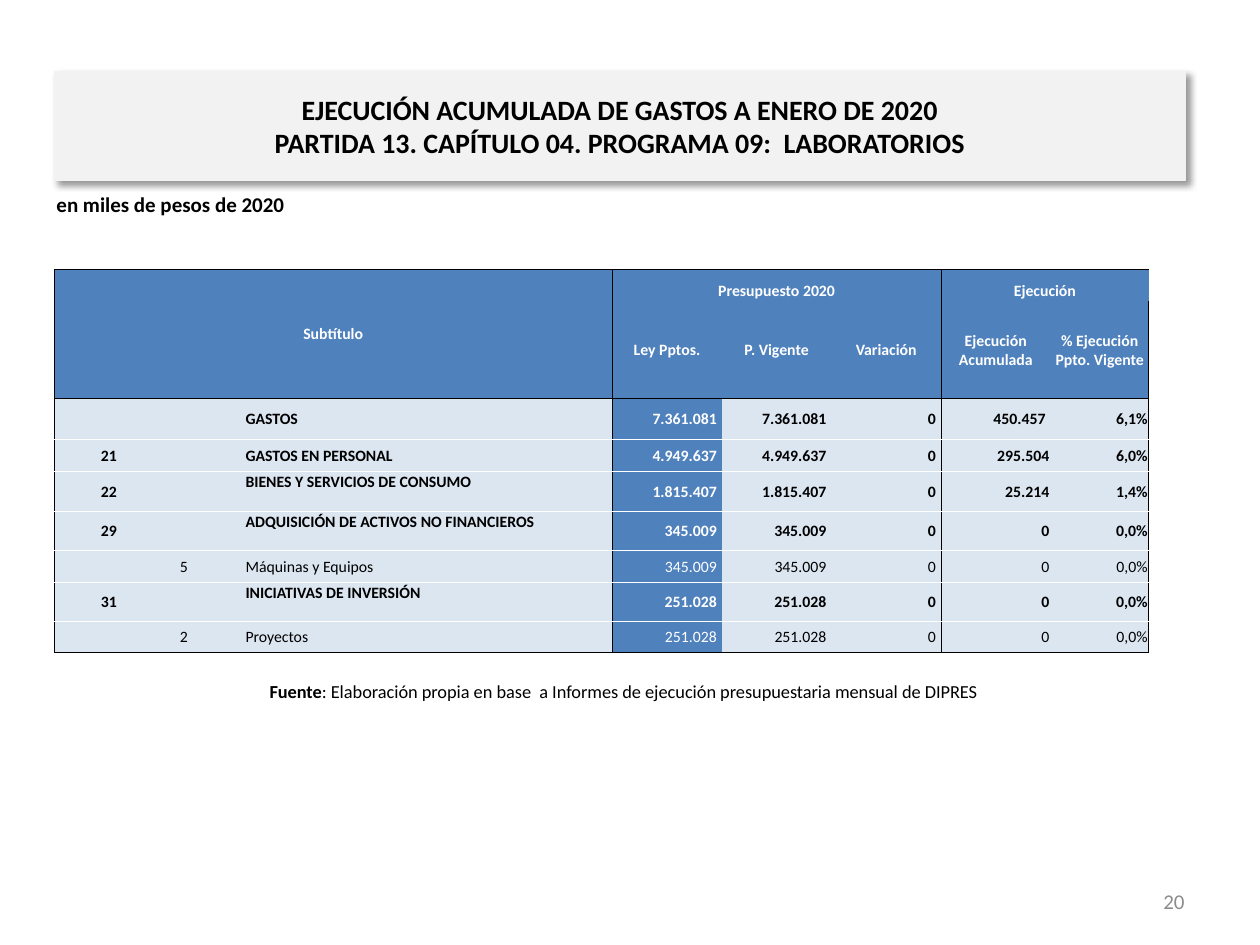
from lxml import etree
from pptx import Presentation
from pptx.dml.color import RGBColor
from pptx.enum import text as t
from pptx.oxml.ns import qn
from pptx.util import Inches, Pt

# Content
TITLE = ["EJECUCIÓN ACUMULADA DE GASTOS A ENERO DE 2020",
         "PARTIDA 13. CAPÍTULO 04. PROGRAMA 09:  LABORATORIOS"]
UNITS = "en miles de pesos de 2020"
SOURCE = ("Fuente", ": Elaboración propia en base  a Informes de ejecución "
          "presupuestaria mensual de DIPRES")
PAGE = "20"
GROUPS = [  # row, column, last row, last column, label
    (0, 0, 1, 3, "Subtítulo"),
    (0, 4, 0, 6, "Presupuesto 2020"),
    (0, 7, 0, 8, "Ejecución"),
]
HEADS = ["Ley Pptos.", "P. Vigente", "Variación",
         "Ejecución Acumulada", "% Ejecución Ppto. Vigente"]
ROWS = [  # code, item, name, law, current, change, spent, share
    ("", "", "GASTOS", "7.361.081", "7.361.081", "0", "450.457", "6,1%"),
    ("21", "", "GASTOS EN PERSONAL", "4.949.637", "4.949.637", "0", "295.504", "6,0%"),
    ("22", "", "BIENES Y SERVICIOS DE CONSUMO", "1.815.407", "1.815.407", "0", "25.214", "1,4%"),
    ("29", "", "ADQUISICIÓN DE ACTIVOS NO FINANCIEROS", "345.009", "345.009", "0", "0", "0,0%"),
    ("", "5", "Máquinas y Equipos", "345.009", "345.009", "0", "0", "0,0%"),
    ("31", "", "INICIATIVAS DE INVERSIÓN", "251.028", "251.028", "0", "0", "0,0%"),
    ("", "2", "Proyectos", "251.028", "251.028", "0", "0", "0,0%"),
]
WIDTHS = [0.87, 0.32, 0.32, 2.92, 0.87, 0.87, 0.87, 0.87, 0.78]
HEIGHTS = [0.25, 0.77, 0.33, 0.25, 0.32, 0.31, 0.25, 0.31, 0.25]
TALL = 0.3  # taller rows keep their name at the top
BLUE, PALE, GREY = "4F81BD", "DCE6F1", "F2F2F2"
BLACK, WHITE = "000000", "FFFFFF"
LEFT, MID, RIGHT = t.PP_ALIGN.LEFT, t.PP_ALIGN.CENTER, t.PP_ALIGN.RIGHT
TOP, CENTER, BOTTOM = t.MSO_ANCHOR.TOP, t.MSO_ANCHOR.MIDDLE, t.MSO_ANCHOR.BOTTOM


def rgb(code):
    return RGBColor.from_string(code)


def add_run(para, words, size, color=BLACK, bold=False):
    run = para.add_run()
    run.text = words
    font = run.font
    font.name, font.size, font.bold = "Calibri", Pt(size), bold
    font.color.rgb = rgb(color)


def add_box(slide, spot, align, anchor):
    frame = slide.shapes.add_textbox(*map(Inches, spot)).text_frame
    frame.word_wrap = True
    frame.vertical_anchor = anchor
    para = frame.paragraphs[0]
    para.alignment = align
    return para


def add_edges(cell, row, col):
    """Black outlines around the column groups, white rules between rows."""
    last = len(HEIGHTS)

    def rule(line):
        if line in (0, 2, last):
            return BLACK
        return WHITE if line > 2 else None

    def side(line):
        return BLACK if line in (0, 4, 7, 9) else None

    props = cell._tc.get_or_add_tcPr()
    edges = {"L": side(col), "R": side(col + 1), "T": rule(row), "B": rule(row + 1)}
    for key, color in edges.items():
        line = etree.SubElement(props, qn("a:ln" + key), w=str(Pt(0.5)))
        if color:
            fill = etree.SubElement(line, qn("a:solidFill"))
            etree.SubElement(fill, qn("a:srgbClr"), val=color)
        else:
            etree.SubElement(line, qn("a:noFill"))


def fill_cell(cell, words, align, color, bold, anchor=CENTER, pad=0.01):
    cell.vertical_anchor = anchor
    cell.margin_right = Inches(pad)
    para = cell.text_frame.paragraphs[0]
    para.alignment = align
    add_run(para, words, 9, color, bold)


def add_title(slide):
    shape = slide.shapes.title
    shape.left, shape.top, shape.width, shape.height = map(
        Inches, (0.43, 0.57, 8.98, 0.86))
    shape.fill.solid()
    shape.fill.fore_color.rgb = rgb(GREY)
    shape.line.color.rgb = rgb(GREY)
    shape.line.width = Pt(0.75)
    # Soft shadow to the lower right
    effects = etree.SubElement(shape._element.spPr, qn("a:effectLst"))
    shadow = etree.SubElement(effects, qn("a:outerShdw"), blurRad=str(Pt(4)),
                              dist=str(Pt(3)), dir="2700000", algn="tl", rotWithShape="0")
    tint = etree.SubElement(shadow, qn("a:srgbClr"), val=BLACK)
    etree.SubElement(tint, qn("a:alpha"), val="40000")
    frame = shape.text_frame
    frame.auto_size = t.MSO_AUTO_SIZE.NONE
    frame.vertical_anchor = CENTER
    para = frame.paragraphs[0]
    para.alignment = MID
    for i, line in enumerate(TITLE):
        if i:
            para.add_line_break()
        add_run(para, line, 16, bold=True)


def add_grid(slide):
    frame = slide.shapes.add_table(
        len(HEIGHTS), len(WIDTHS), Inches(0.43), Inches(2.14),
        Inches(sum(WIDTHS)), Inches(sum(HEIGHTS)))
    table = frame.table
    table.first_row = table.horz_banding = False
    for column, width in zip(table.columns, WIDTHS):
        column.width = Inches(width)
    for line, height in zip(table.rows, HEIGHTS):
        line.height = Inches(height)

    # Edges, fills and margins
    for row in range(len(HEIGHTS)):
        for col in range(len(WIDTHS)):
            cell = table.cell(row, col)
            add_edges(cell, row, col)
            cell.fill.solid()
            cell.fill.fore_color.rgb = rgb(BLUE if row < 2 or col == 4 else PALE)
            cell.margin_left = cell.margin_top = cell.margin_right = Inches(0.01)
            cell.margin_bottom = 0
            para = cell.text_frame.paragraphs[0]
            etree.SubElement(para._p, qn("a:endParaRPr"), sz="900")

    # Header
    for row, col, end, stop, label in GROUPS:
        cell = table.cell(row, col)
        cell.merge(table.cell(end, stop))
        fill_cell(cell, label, MID, WHITE, True, CENTER if end else BOTTOM)
    for col, label in enumerate(HEADS, 4):
        fill_cell(table.cell(1, col), label, MID, WHITE, True)

    # Body: the third column stays empty
    for row, (code, item, name, *values) in enumerate(ROWS, 2):
        bold = not item
        for col, words in enumerate((code, item)):
            if words:
                fill_cell(table.cell(row, col), words, MID, BLACK, bold)
        high = row > 2 and HEIGHTS[row] > TALL
        fill_cell(table.cell(row, 3), name, LEFT, BLACK, bold, TOP if high else CENTER)
        for col, words in enumerate(values, 4):
            pad = 0.04 if col < 7 or (row, col) == (2, 7) else 0.01
            fill_cell(table.cell(row, col), words, RIGHT,
                      WHITE if col == 4 else BLACK, bold, pad=pad)


def main():
    deck = Presentation()
    deck.slide_width, deck.slide_height = Inches(10), Inches(7.5)
    slide = deck.slides.add_slide(deck.slide_layouts[5])

    # Source, page number and units
    para = add_box(slide, (0.46, 5.33, 8.98, 0.31), MID, CENTER)
    for words, bold in zip(SOURCE, (True, False)):
        add_run(para, words, 10.5, bold=bold)
    add_run(add_box(slide, (7.17, 6.95, 2.33, 0.4), RIGHT, CENTER), PAGE, 12, "8C8C8C")
    add_run(add_box(slide, (0.35, 1.47, 8.44, 0.31), LEFT, TOP), UNITS, 12, bold=True)

    add_title(slide)
    add_grid(slide)
    deck.save("out.pptx")


if __name__ == "__main__":
    main()
